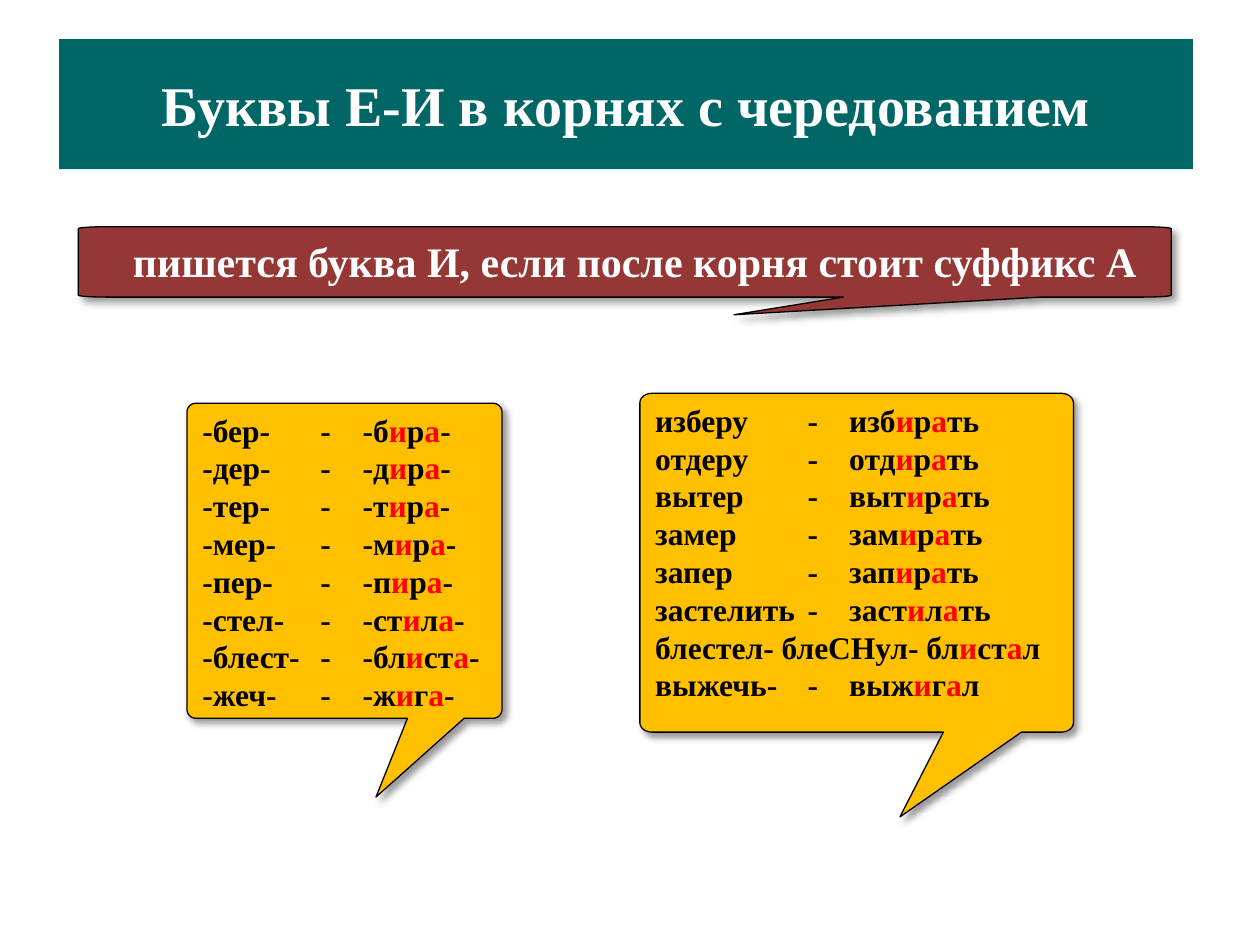
from dataclasses import dataclass
from math import cos, pi, sin

from lxml.etree import SubElement
from pptx import Presentation
from pptx.dml.color import RGBColor
from pptx.enum.text import MSO_ANCHOR as Anchor, PP_ALIGN as Align
from pptx.oxml import parse_xml
from pptx.oxml.ns import nsdecls, qn
from pptx.util import Cm, Pt


@dataclass(frozen=True)
class Theme:
    font: str = "Times New Roman"
    teal: str = "006666"
    brick: str = "953735"
    amber: str = "FFC000"
    white: str = "FFFFFF"
    black: str = "000000"
    red: str = "FF0000"
    title_size: float = 32
    rule_size: float = 24
    list_size: float = 18
    list_spacing: float = 21.6


THEME = Theme()

TITLE = "Буквы Е-И в корнях с чередованием"
RULE = "пишется буква И, если после корня стоит суффикс А"
# Letters between asterisks are highlighted.
ROOTS = [
    "-бер-\t-\t-б*и*р*а*-",
    "-дер-\t-\t-д*и*р*а*-",
    "-тер-\t-\t-т*и*р*а*-",
    "-мер-\t-\t-м*и*р*а*-",
    "-пер-\t-\t-п*и*р*а*-",
    "-стел-\t-\t-ст*и*л*а*-",
    "-блест-\t-\t-бл*и*ст*а*-",
    "-жеч-\t-\t-ж*и*г*а*-",
]
EXAMPLES = [
    "изберу\t-\tизб*и*р*а*ть",
    "отдеру\t-\tотд*и*р*а*ть",
    "вытер\t-\tвыт*и*р*а*ть",
    "замер\t-\tзам*и*р*а*ть",
    "запер\t-\tзап*и*р*а*ть",
    "застелить\t-\tзаст*и*л*а*ть",
    "блестел- блеСНул- бл*и*ст*а*л",
    "выжечь-\t-\tвыж*и*г*а*л",
]


def apply(target, **values):
    for name, value in values.items():
        setattr(target, name, value)


def paint(shape, colour):
    shape.fill.solid()
    shape.fill.fore_color.rgb = RGBColor.from_string(colour)


def add_span(para, text, size, colour):
    span = para.add_run()
    span.text = text
    apply(span.font, name=THEME.font, size=Pt(size), bold=True)
    span.font.color.rgb = RGBColor.from_string(colour)


def add_title(page):
    title = page.shapes.title
    apply(title, left=Cm(1.19), top=Cm(0.79), width=Cm(22.86), height=Cm(2.62))
    paint(title, THEME.teal)
    title.text_frame.vertical_anchor = Anchor.MIDDLE
    para = title.text_frame.paragraphs[0]
    para.alignment = Align.CENTER
    add_span(para, TITLE, THEME.title_size, THEME.white)


def add_shadow(shape):
    shape._element.spPr.append(parse_xml(
        f'<a:effectLst {nsdecls("a")}>'
        f'<a:outerShdw blurRad="{Pt(4)}" dist="{Pt(3)}" dir="2700000" algn="tl" rotWithShape="0">'
        f'<a:srgbClr val="{THEME.black}"><a:alpha val="40000"/></a:srgbClr>'
        '</a:outerShdw></a:effectLst>'))


def callout_outline(left, top, width, height):
    """Rounded body with a tail below, all in fixed shares of the body size."""
    radius, steps = 1 / 36, 6

    def corner(x, y, start):
        angles = [start + pi / 2 * step / steps for step in range(steps + 1)]
        return [(x + radius * cos(a), y + radius * sin(a)) for a in angles]

    far = 1 - radius
    tail = [(0.88, 1), (0.6, 1.25), (0.7, 1)]
    shares = (corner(far, radius, -pi / 2) + corner(far, far, 0) + tail
              + corner(radius, far, pi / 2) + corner(radius, radius, pi))
    return [(Cm(left + width * x), Cm(top + height * y)) for x, y in shares]


def add_callout(page, body, colour, inset_left, inset_top):
    points = callout_outline(*body)
    builder = page.shapes.build_freeform(*points[0])
    builder.add_line_segments(points[1:], close=True)
    shape = builder.convert_to_shape()
    paint(shape, colour)
    shape.line.color.rgb = RGBColor.from_string(THEME.black)
    shape.line.width = Pt(0.75)
    add_shadow(shape)
    apply(shape.text_frame, word_wrap=True, vertical_anchor=Anchor.TOP,
          margin_left=Cm(inset_left), margin_top=Cm(inset_top),
          margin_right=Cm(0.1), margin_bottom=Cm(0.1))
    return shape.text_frame


def add_tab_stops(para, stops):
    tabs = SubElement(para._p.get_or_add_pPr(), qn("a:tabLst"))
    for stop in stops:
        SubElement(tabs, qn("a:tab"), pos=str(Cm(stop)), algn="l")


def add_rule(page):
    frame = add_callout(page, (1.58, 4.57, 22.03, 1.42), THEME.brick, 1.1, 0.18)
    para = frame.paragraphs[0]
    para.alignment = Align.LEFT
    add_span(para, RULE, THEME.rule_size, THEME.white)


def add_word_list(page, body, rows, stops):
    frame = add_callout(page, body, THEME.amber, 0.31, 0.15)
    for index, row in enumerate(rows):
        para = frame.add_paragraph() if index else frame.paragraphs[0]
        apply(para, alignment=Align.LEFT, line_spacing=Pt(THEME.list_spacing))
        add_tab_stops(para, stops)
        for part, text in enumerate(row.split("*")):
            add_span(para, text, THEME.list_size, THEME.red if part % 2 else THEME.black)


def main():
    deck = Presentation()
    apply(deck, slide_width=Cm(25.4), slide_height=Cm(19.05))
    page = deck.slides.add_slide(deck.slide_layouts[5])
    add_title(page)
    add_rule(page)
    add_word_list(page, (3.77, 8.13, 6.35, 6.35), ROOTS, (2.38, 3.23))
    add_word_list(page, (12.9, 7.93, 8.74, 6.83), EXAMPLES, (3.07, 3.91))
    deck.save("out.pptx")


if __name__ == "__main__":
    main()
